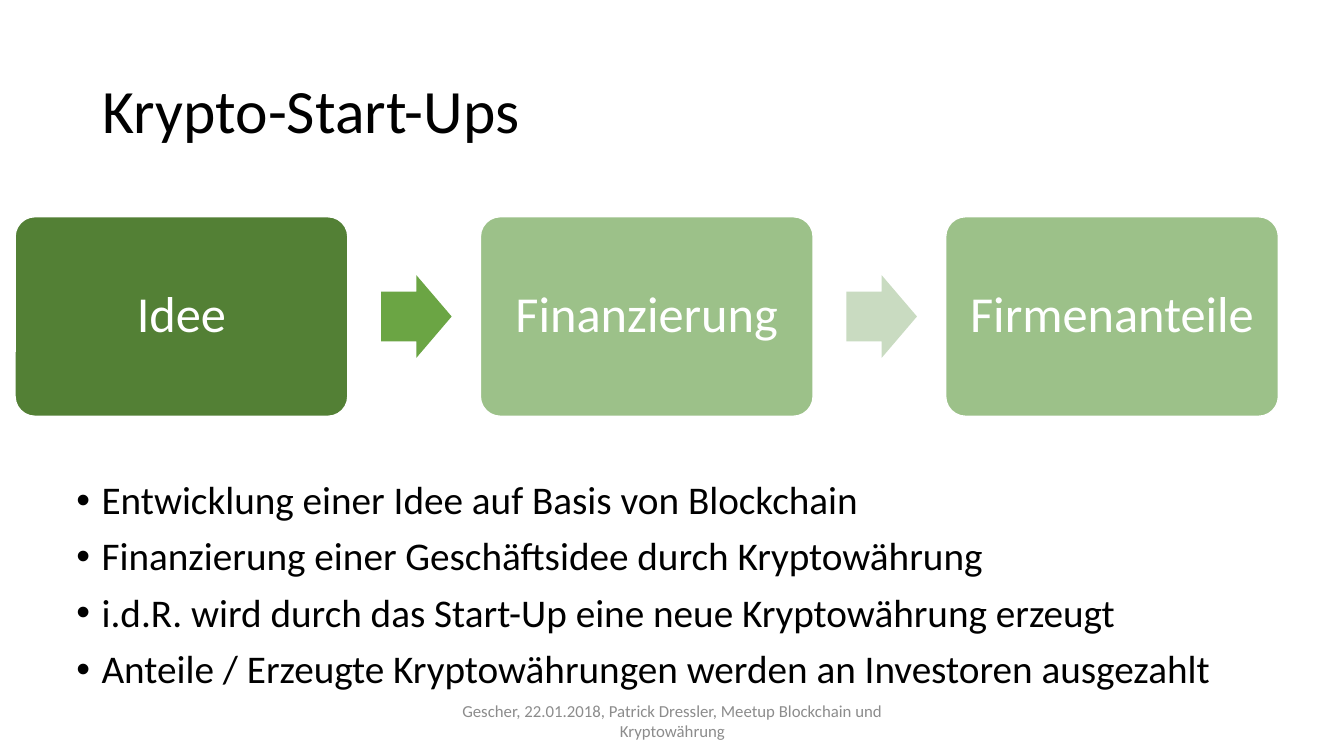
"""Build the slide on crypto start-ups with a three-step process and bullets."""
from lxml import etree
from pptx import Presentation
from pptx.dml.color import RGBColor
from pptx.enum import shapes, text
from pptx.oxml.ns import qn
from pptx.util import Inches, Pt


def paint(fmt, color):
    fmt.solid()
    fmt.fore_color.rgb = RGBColor.from_string(color)


def write(sp, lines, size, color="000000", align=text.PP_ALIGN.LEFT,
          anchor=text.MSO_ANCHOR.MIDDLE, spacing=0.9, before=0, bullet=False):
    tf = sp.text_frame
    tf.word_wrap = True
    tf.auto_size = text.MSO_AUTO_SIZE.NONE
    tf.vertical_anchor = anchor
    for i, line in enumerate(lines):
        p = tf.add_paragraph() if i else tf.paragraphs[0]
        if bullet:
            pPr = p._p.get_or_add_pPr()
            pPr.set("marL", str(Inches(0.25)))
            pPr.set("indent", str(Inches(-0.25)))
            etree.SubElement(pPr, qn("a:buFont")).set("typeface", "Arial")
            etree.SubElement(pPr, qn("a:buChar")).set("char", "•")
        p.alignment = align
        p.line_spacing = spacing
        p.space_before = Pt(before if i else 0)
        r = p.add_run()
        r.text = line
        r.font.name = "Calibri"
        r.font.size = Pt(size)
        paint(r.font.fill, color)


prs = Presentation()
prs.slide_width, prs.slide_height = Inches(13.33), Inches(7.5)
s = prs.slides.add_slide(prs.slide_layouts[5])

title = s.shapes.title
title.left, title.top = Inches(0.92), Inches(0.4)
title.width, title.height = Inches(11.5), Inches(1.45)
write(title, ["Krypto-Start-Ups"], 44)

body = s.shapes.add_textbox(Inches(0.66), Inches(4.72), Inches(11.5), Inches(2.37))
write(body, [
    "Entwicklung einer Idee auf Basis von Blockchain",
    "Finanzierung einer Geschäftsidee durch Kryptowährung",
    "i.d.R. wird durch das Start-Up eine neue Kryptowährung erzeugt",
    "Anteile / Erzeugte Kryptowährungen werden an Investoren ausgezahlt",
], 28, anchor=text.MSO_ANCHOR.TOP, before=10, bullet=True)

footer = s.shapes.add_textbox(Inches(4.42), Inches(6.95), Inches(4.5), Inches(0.4))
write(footer, ["Gescher, 22.01.2018, Patrick Dressler, Meetup Blockchain und Kryptowährung"],
      12, color="8C8C8C", align=text.PP_ALIGN.CENTER, spacing=1.0)

steps = [("Idee", "538035", "6BA544"),
         ("Finanzierung", "9CC189", "C9DBC1"),
         ("Firmenanteile", "9CC189", None)]
for i, (label, box_color, arrow_color) in enumerate(steps):
    left = 0.15 + i * 4.615
    box = s.shapes.add_shape(shapes.MSO_SHAPE.ROUNDED_RECTANGLE,
                             Inches(left), Inches(2.15), Inches(3.3), Inches(1.98))
    box.shadow.inherit = False
    box.adjustments[0] = 0.1
    paint(box.fill, box_color)
    paint(box.line.fill, "FFFFFF")
    box.line.width = Pt(1)
    tf = box.text_frame
    tf.margin_left = tf.margin_right = tf.margin_top = tf.margin_bottom = Inches(0.15)
    write(box, [label], 36, color="FFFFFF", align=text.PP_ALIGN.CENTER)
    if arrow_color:
        arrow = s.shapes.add_shape(shapes.MSO_SHAPE.RIGHT_ARROW,
                                   Inches(left + 3.63), Inches(2.73), Inches(0.7), Inches(0.82))
        arrow.shadow.inherit = False
        arrow.adjustments[0], arrow.adjustments[1] = 0.6, 0.5
        paint(arrow.fill, arrow_color)
        arrow.line.fill.background()

prs.save("out.pptx")
